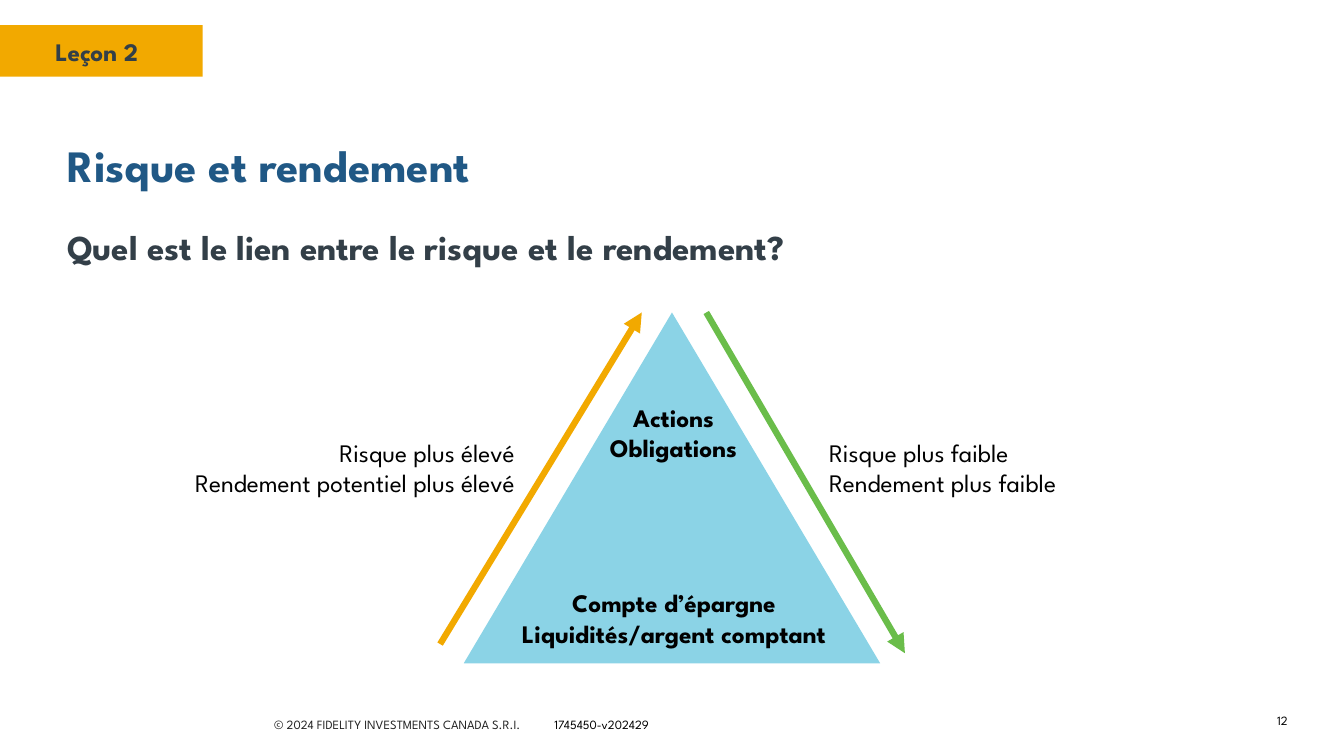
from lxml import etree
from pptx import Presentation
from pptx.dml.color import RGBColor as Rgb
from pptx.enum.shapes import MSO_CONNECTOR as Conn, MSO_SHAPE as Shape
from pptx.enum.text import MSO_ANCHOR as Anchor, MSO_AUTO_SIZE as Fit, PP_ALIGN as Align
from pptx.oxml.ns import qn
from pptx.util import Inches, Pt

HUES = {"gold": "F2A900", "slate": "333F48", "blue": "205885", "sky": "8BD3E6",
        "green": "6ABD4A", "ink": "000000", "gray": "222222"}
FACE = "League Spartan"


def hue(name):
    """Return the named colour."""
    return Rgb.from_string(HUES[name])


def style(font, size, color="ink", bold=False):
    """Format a font from a dict of values."""
    for key, value in {"name": FACE, "size": Pt(size), "bold": bold}.items():
        setattr(font, key, value)
    font.color.rgb = hue(color)


def fill_text(frame, lines, size, color="ink", bold=False, align=Align.LEFT, anchor=Anchor.TOP):
    """Write lines into a text frame, one paragraph each."""
    values = {"word_wrap": True, "auto_size": Fit.NONE, "vertical_anchor": anchor,
              "margin_left": Inches(0.1), "margin_right": Inches(0.1),
              "margin_top": Inches(0.05), "margin_bottom": Inches(0.05)}
    for key, value in values.items():
        setattr(frame, key, value)
    frame.text = "\n".join(lines)
    for para in frame.paragraphs:
        para.alignment = align
        for run in para.runs:
            style(run.font, size, color, bold)


def add_text(slide, box, lines, size, **look):
    """Add a text box and return its frame."""
    frame = slide.shapes.add_textbox(*map(Inches, box)).text_frame
    fill_text(frame, lines, size, **look)
    return frame


def add_solid(slide, kind, box, color):
    """Add a flat filled shape without outline."""
    shape = slide.shapes.add_shape(kind, *map(Inches, box))
    shape.shadow.inherit = False
    shape.fill.solid()
    shape.fill.fore_color.rgb = hue(color)
    shape.line.fill.background()


def add_arrow(slide, start, end, color):
    """Add a thick arrow between two points."""
    arrow = slide.shapes.add_connector(Conn.STRAIGHT, *map(Inches, (*start, *end)))
    arrow.line.width = Pt(4.5)
    arrow.line.color.rgb = hue(color)
    etree.SubElement(arrow.line._get_or_add_ln(), qn("a:tailEnd"), type="triangle")
    etree.SubElement(arrow._element.spPr, qn("a:effectLst"))


def add_tag(slide, x, y, w, h):
    """Draw the lesson tag."""
    add_solid(slide, Shape.RECTANGLE, (x, y, w, h), "gold")
    add_text(slide, (x + 0.45, y + 0.06, w - 0.7, 0.4), ["Leçon 2"], 18,
             color="slate", bold=True)


def add_head(slide, x, y, w, h):
    """Place the title and the question under it."""
    title = slide.shapes.title
    for key, value in zip(("left", "top", "width", "height"), (x, y, w, 0.73)):
        setattr(title, key, Inches(value))
    fill_text(title.text_frame, ["Risque et rendement"], 32, color="blue",
              bold=True, anchor=Anchor.MIDDLE)
    add_text(slide, (x, y + h - 0.54, w, 0.54),
             ["Quel est le lien entre le risque et le rendement?"], 25,
             color="slate", bold=True, anchor=Anchor.MIDDLE)


def add_pyramid(slide, x, y, w, h):
    """Draw the triangle with its arrows and labels."""
    add_solid(slide, Shape.ISOSCELES_TRIANGLE, (x, y, w, h), "sky")
    mid = x + w / 2
    add_arrow(slide, (mid + 0.34, y), (mid + 2.31, y + 3.38), "green")
    add_arrow(slide, (mid - 2.3, y + 3.29), (mid - 0.3, y), "gold")
    inner = {"bold": True, "align": Align.CENTER}
    labels = [
        (mid - 0.78, 0.84, 1.59, ["Actions", "Obligations"], inner),
        (mid - 1.75, 2.68, 3.54, ["Compte d’épargne", "Liquidités/argent comptant"], inner),
        (mid + 1.46, 1.19, 3.2, ["Risque plus faible", "Rendement plus faible"], {}),
        (mid - 6.46, 1.19, 5, ["Risque plus élevé", "Rendement potentiel plus élevé"],
         {"align": Align.RIGHT}),
    ]
    for left, drop, wide, lines, look in labels:
        add_text(slide, (left, y + drop, wide, 0.71), lines, 18, **look)


def add_foot(slide, x, y, w, h):
    """Write the copyright line, its code and the page number."""
    frame = add_text(slide, (x, y, 5.25, h), ["© 2024 FIDELITY INVESTMENTS CANADA S.R.I."],
                     9, color="gray")
    para = frame.paragraphs[0]
    tabs = etree.SubElement(para._p.get_or_add_pPr(), qn("a:tabLst"))
    etree.SubElement(tabs, qn("a:tab"), pos=str(Inches(2.78)), algn="l")
    code = para.add_run()
    code.text = "\t1745450-v202429"
    style(code.font, 9)
    add_text(slide, (x + w - 0.7, y, 0.7, 0.18), ["12"], 9,
             align=Align.RIGHT, anchor=Anchor.MIDDLE)


def main():
    """Build and save the slide."""
    deck = Presentation()
    deck.slide_width, deck.slide_height = Inches(13.33), Inches(7.5)
    slide = deck.slides.add_slide(deck.slide_layouts[5])
    add_tag(slide, 0, 0.25, 2.01, 0.51)
    add_head(slide, 0.57, 1.27, 12.2, 1.45)
    add_pyramid(slide, 4.6, 3.1, 4.13, 3.48)
    add_foot(slide, 2.62, 7.06, 10.25, 0.25)
    deck.save("out.pptx")


if __name__ == "__main__":
    main()
